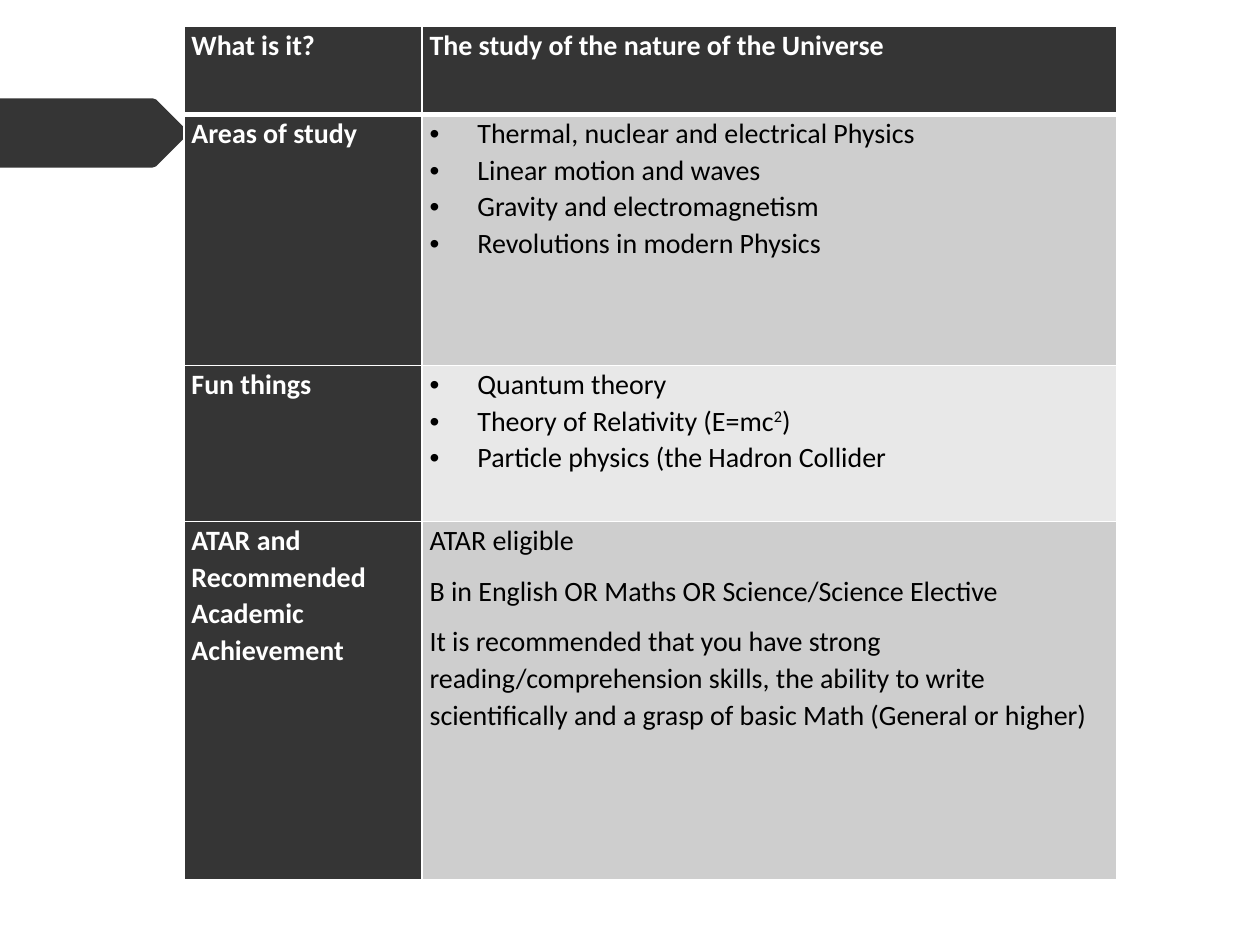
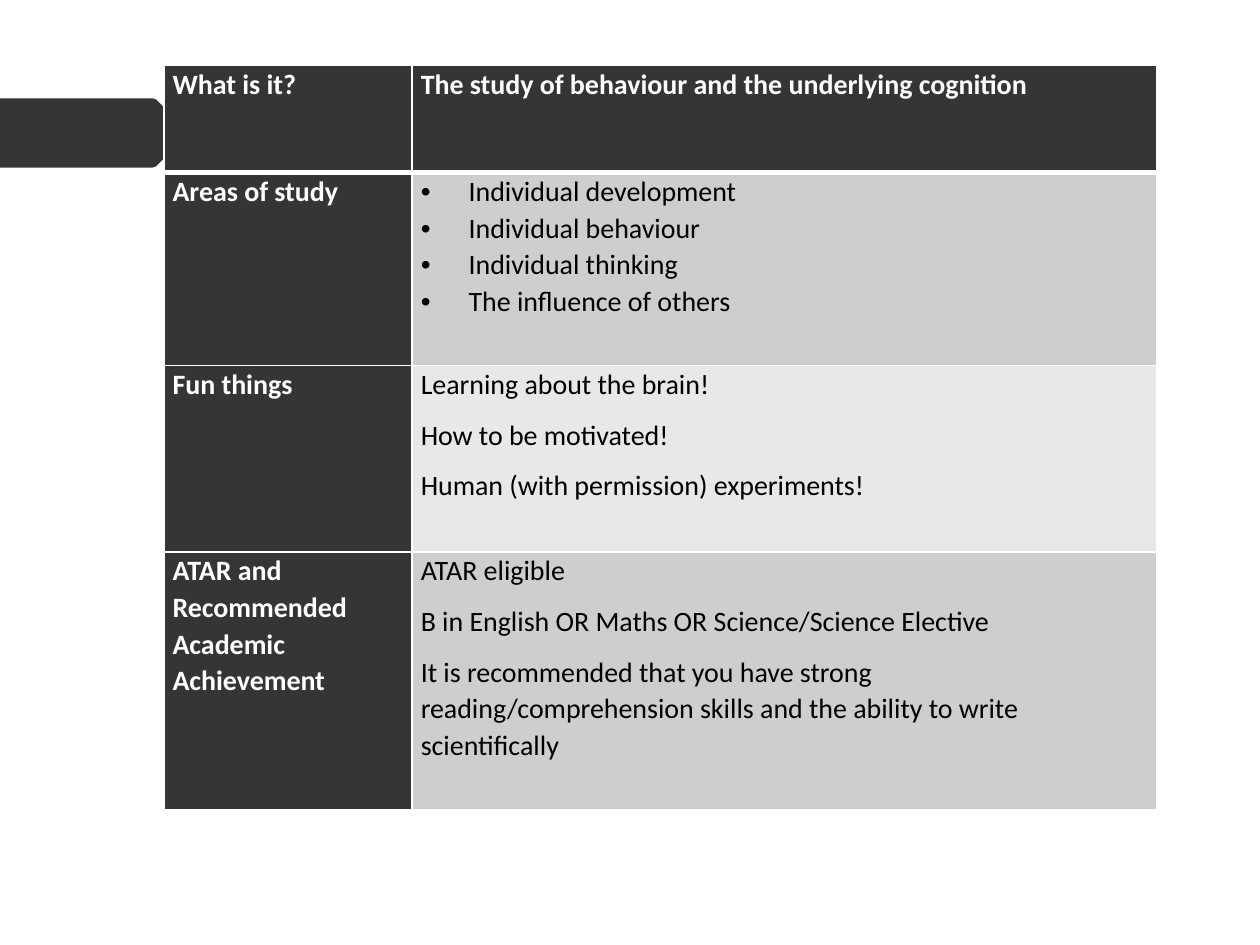
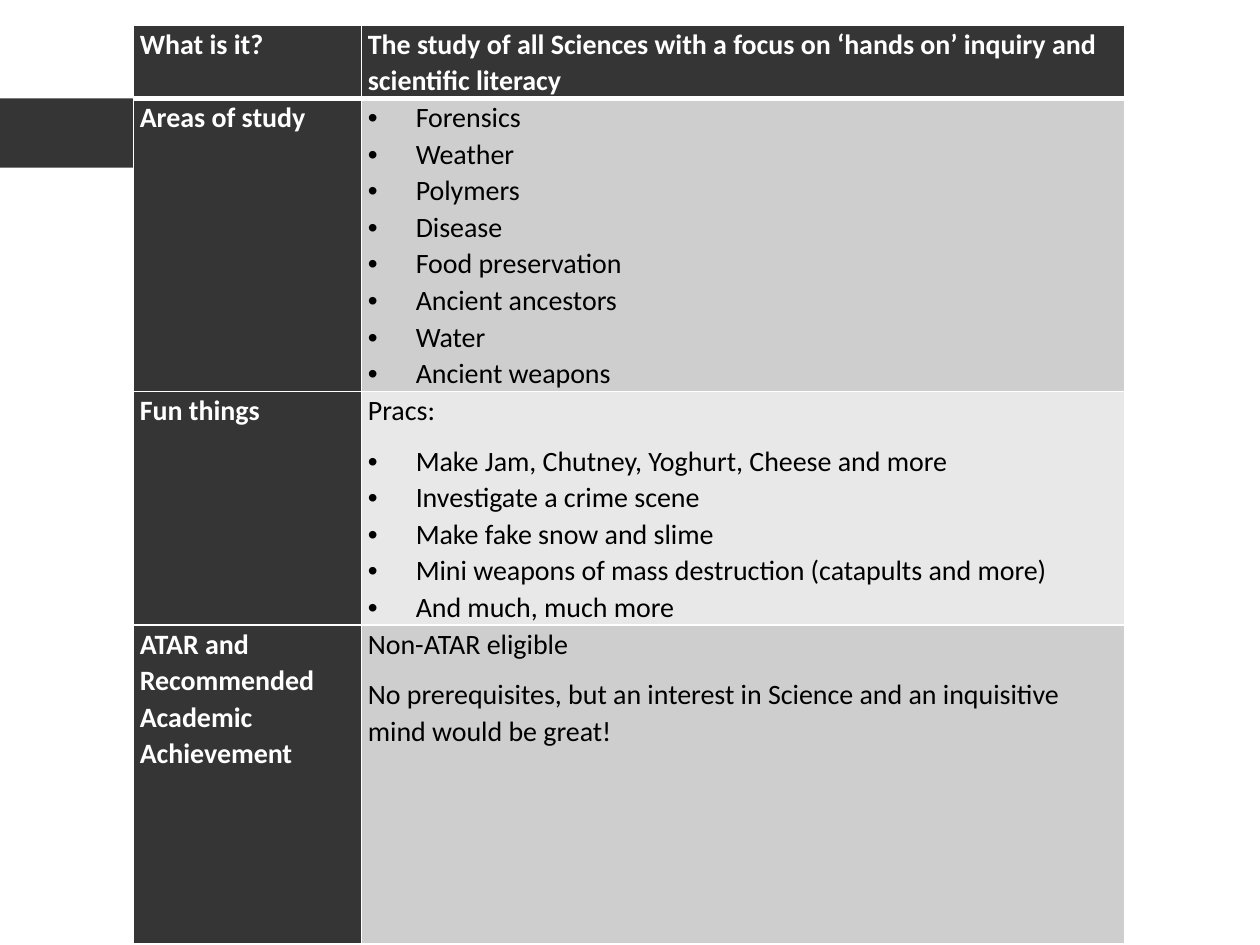
import pptx
import pptx.dml.color
import pptx.oxml
import pptx.oxml.ns
import pptx.util

Inches, Pt = pptx.util.Inches, pptx.util.Pt
RGB = pptx.dml.color.RGBColor.from_string
COLORS = {"dark": "353535", "band": "CECECE", "light": "E8E8E8",
          "white": "FFFFFF", "black": "000000"}
FONT = "Calibri"
INDENT = Inches(0.38)
HEADINGS = ["What is it?", "Areas of study", "Fun things",
            "ATAR and Recommended Academic Achievement"]
ROW_FILLS = ["dark", "band", "light", "band"]
TAG_POINTS = [(0, 0.78), (1.21, 0.78), (1.24, 0.79), (1.49, 1.04), (1.5, 1.055),
              (1.49, 1.07), (1.24, 1.32), (1.21, 1.33), (0, 1.33)]

# A leading "• " makes a bullet; text between carets is superscript.
SUBJECTS = [
    {"left": 1.46, "top": 0.21, "inset": 0.06,
     "cols": [1.89, 5.51], "rows": [0.7, 1.99, 1.24, 2.84],
     "answers": [
         ["The study of the nature of the Universe"],
         ["• Thermal, nuclear and electrical Physics",
          "• Linear motion and waves",
          "• Gravity and electromagnetism",
          "• Revolutions in modern Physics"],
         ["• Quantum theory",
          "• Theory of Relativity (E=mc^2^)",
          "• Particle physics (the Hadron Collider"],
         ["ATAR eligible",
          "B in English OR Maths OR Science/Science Elective",
          "It is recommended that you have strong reading/comprehension skills, "
          "the ability to write scientifically and a grasp of basic Math "
          "(General or higher)"]]},
    {"left": 1.3, "top": 0.52, "inset": 0.07,
     "cols": [1.97, 5.91], "rows": [0.85, 1.53, 1.48, 2.05],
     "answers": [
         ["The study of behaviour and the underlying cognition"],
         ["• Individual development",
          "• Individual behaviour",
          "• Individual thinking",
          "• The influence of others"],
         ["Learning about the brain!",
          "How to be motivated!",
          "Human (with permission) experiments!"],
         ["ATAR eligible",
          "B in English OR Maths OR Science/Science Elective",
          "It is recommended that you have strong reading/comprehension skills "
          "and the ability to write scientifically"]]},
    {"left": 1.06, "top": 0.2, "inset": 0.05,
     "cols": [1.81, 6.06], "rows": [0.44, 1.81, 1.67, 2.53],
     "answers": [
         ["The study of all Sciences with a focus on ‘hands on’ inquiry "
          "and scientific literacy"],
         ["• Forensics", "• Weather", "• Polymers", "• Disease",
          "• Food preservation", "• Ancient ancestors", "• Water",
          "• Ancient weapons"],
         ["Pracs:",
          "• Make Jam, Chutney, Yoghurt, Cheese and more",
          "• Investigate a crime scene",
          "• Make fake snow and slime",
          "• Mini weapons of mass destruction (catapults and more)",
          "• And much, much more"],
         ["Non-ATAR eligible",
          "No prerequisites, but an interest in Science and an inquisitive "
          "mind would be great!"]]},
]


def style_cell(cell, fill, inset, top, bottom):
    """Set margins, white borders (top and bottom widths in points) and fill."""
    cell.margin_left = cell.margin_right = Inches(inset)
    cell.margin_top = cell.margin_bottom = 0
    tcPr = cell._tc.get_or_add_tcPr()
    for side, width in (("L", 1), ("R", 1), ("T", top), ("B", bottom)):
        tcPr.append(pptx.oxml.parse_xml(
            f'<a:ln{side} {pptx.oxml.ns.nsdecls("a")} w="{Pt(width)}"><a:solidFill>'
            f'<a:srgbClr val="{COLORS["white"]}"/></a:solidFill></a:ln{side}>'))
    cell.fill.solid()
    cell.fill.fore_color.rgb = RGB(COLORS[fill])


def write_cell(cell, lines, color, bold):
    tf = cell.text_frame
    for i, line in enumerate(lines):
        p = tf.paragraphs[0] if i == 0 else tf.add_paragraph()
        bullet = line.startswith("• ")
        if bullet:
            pPr = p._p.get_or_add_pPr()
            pPr.set("marL", str(INDENT))
            pPr.set("indent", str(-INDENT))
            for tag in ('buFont {} typeface="Arial"', 'buChar {} char="•"'):
                pPr.append(pptx.oxml.parse_xml(
                    f'<a:{tag.format(pptx.oxml.ns.nsdecls("a"))}/>'))
        p.line_spacing = 1.07
        p.space_after = Pt(0 if bullet and i < len(lines) - 1 else 8)
        for j, part in enumerate(line.removeprefix("• ").split("^")):
            r = p.add_run()
            r.text = part
            r.font.name, r.font.size, r.font.bold = FONT, Pt(16), bold
            r.font.color.rgb = RGB(COLORS[color])
            if j % 2:
                r._r.get_or_add_rPr().set("baseline", "30000")


prs = pptx.Presentation()
prs.slide_width, prs.slide_height = Inches(10), Inches(7.5)

for subject in SUBJECTS:
    s = prs.slides.add_slide(prs.slide_layouts[6])

    points = [(Inches(x), Inches(y)) for x, y in TAG_POINTS]
    outline = s.shapes.build_freeform(*points[0])
    outline.add_line_segments(points[1:], close=True)
    tag = outline.convert_to_shape()
    tag.shadow.inherit = False
    tag.fill.solid()
    tag.fill.fore_color.rgb = RGB(COLORS["dark"])
    tag.line.fill.background()

    cols, rows = subject["cols"], subject["rows"]
    table = s.shapes.add_table(
        len(rows), len(cols), Inches(subject["left"]), Inches(subject["top"]),
        Inches(sum(cols)), Inches(sum(rows))).table
    table.horz_banding = False
    for column, width in zip(table.columns, cols):
        column.width = Inches(width)
    for n, (row, height) in enumerate(zip(table.rows, rows)):
        row.height = Inches(height)
        heading, answer = row.cells
        header = n == 0
        top, bottom = 3 if n == 1 else 1, 3 if header else 1
        style_cell(heading, "dark", subject["inset"], top, bottom)
        style_cell(answer, ROW_FILLS[n], subject["inset"], top, bottom)
        write_cell(heading, [HEADINGS[n]], "white", True)
        write_cell(answer, subject["answers"][n],
                   "white" if header else "black", header)

prs.save("out.pptx")
